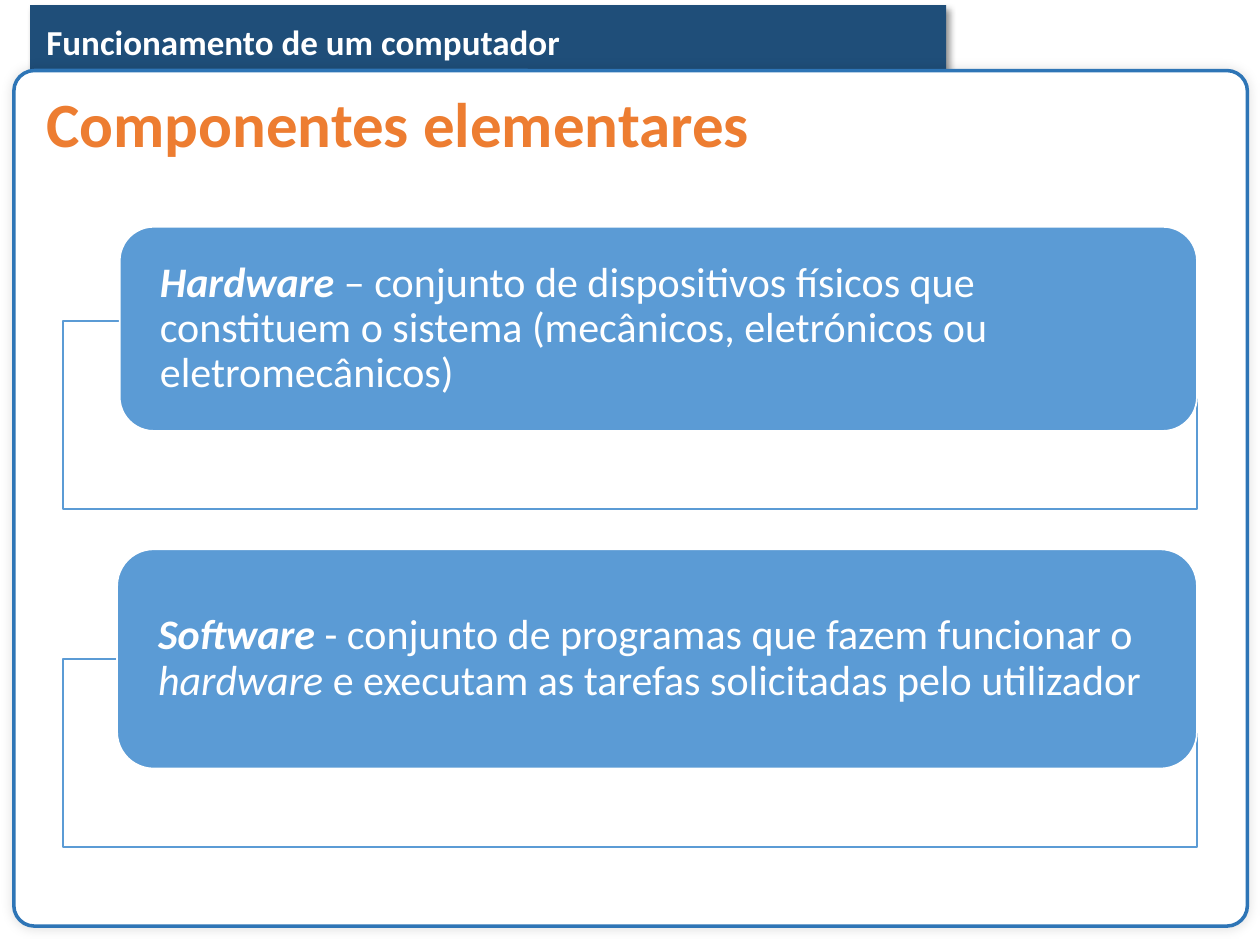
from lxml import etree
from pptx import Presentation
from pptx import util as u
from pptx.dml.color import RGBColor
from pptx.enum import shapes, text
from pptx.oxml import ns

NAVY = RGBColor(0x1F, 0x4E, 0x79)
BORDER_BLUE = RGBColor(0x2E, 0x75, 0xB6)
BLUE = RGBColor(0x5B, 0x9B, 0xD5)
ORANGE = RGBColor(0xED, 0x7D, 0x31)
WHITE = RGBColor(0xFF, 0xFF, 0xFF)
RECTANGLE = shapes.MSO_SHAPE.RECTANGLE
ROUNDED = shapes.MSO_SHAPE.ROUNDED_RECTANGLE

DEFINITIONS = [
    ((0.5, 2.55, 9, 1.49), (0.95, 1.8, 8.55, 1.62), [
        ("Hardware", True, True),
        (" – conjunto de dispositivos físicos que constituem o sistema "
         "(mecânicos, eletrónicos ou eletromecânicos)", False, False),
    ]),
    ((0.5, 5.23, 9, 1.49), (0.93, 4.36, 8.57, 1.74), [
        ("Software", True, True),
        (" - conjunto de programas que fazem funcionar o ", False, False),
        ("hardware", False, True),
        (" e executam as tarefas solicitadas pelo utilizador", False, False),
    ]),
]


def inches(box):
    """Convert a left, top, width, height box to lengths."""
    return [u.Inches(value) for value in box]


def add_box(slide, kind, box, fill, line=None, width=1):
    """Add a filled preset shape without a shadow."""
    shape = slide.shapes.add_shape(kind, *inches(box))
    shape.shadow.inherit = False
    shape.fill.solid()
    shape.fill.fore_color.rgb = fill
    if line is None:
        shape.line.fill.background()
    else:
        shape.line.color.rgb = line
        shape.line.width = u.Pt(width)
    return shape


def add_shadow(shape, opacity, blur, distance, angle):
    """Give a shape a soft black outer shadow."""
    effects = shape.element.spPr.find(ns.qn("a:effectLst"))
    shadow = etree.SubElement(
        effects, ns.qn("a:outerShdw"), blurRad=str(u.Pt(blur)),
        dist=str(u.Pt(distance)), dir=str(angle * 60000),
        algn="ctr", rotWithShape="0")
    color = etree.SubElement(shadow, ns.qn("a:srgbClr"), val="000000")
    etree.SubElement(color, ns.qn("a:alpha"), val=str(opacity * 1000))


def style_font(font, size, color, bold, italic=False):
    """Set the typeface, size, colour and emphasis of a font."""
    font.name = "Calibri"
    font.size = u.Pt(size)
    font.color.rgb = color
    font.bold = bold
    font.italic = italic


def add_heading(slide, box, words, size, color, spacing):
    """Add a bold one-line heading."""
    frame = slide.shapes.add_textbox(*inches(box)).text_frame
    frame.word_wrap = True
    paragraph = frame.paragraphs[0]
    paragraph.text = words
    paragraph.line_spacing = spacing
    style_font(paragraph.runs[0].font, size, color, True)


def add_frame(slide, tab_box, panel_box):
    """Add the chapter tab and the panel that holds the content."""
    tab = add_box(slide, RECTANGLE, tab_box, NAVY)
    add_shadow(tab, 40, 4, 3, 45)
    add_heading(slide, (0.27, 0.06, 7.5, 0.47),
                "Funcionamento de um computador", 20, WHITE, u.Pt(28.1))
    panel = add_box(slide, ROUNDED, panel_box, WHITE, BORDER_BLUE, 2)
    panel.adjustments[0] = 0.024
    add_shadow(panel, 13, 6, 0, 0)


def add_definition(slide, outline_box, label_box, pieces):
    """Add an outlined box with a rounded definition label over it."""
    outline = add_box(slide, RECTANGLE, outline_box, WHITE, BLUE)
    color = outline.fill._xPr.find(".//" + ns.qn("a:srgbClr"))
    etree.SubElement(color, ns.qn("a:alpha"), val="90000")
    label = add_box(slide, ROUNDED, label_box, BLUE, WHITE)
    frame = label.text_frame
    frame.word_wrap = True
    frame.vertical_anchor = text.MSO_ANCHOR.MIDDLE
    frame.margin_left = frame.margin_right = u.Inches(0.24)
    frame.margin_top = frame.margin_bottom = 0
    paragraph = frame.paragraphs[0]
    paragraph.alignment = text.PP_ALIGN.LEFT
    paragraph.line_spacing = 0.9
    for words, bold, italic in pieces:
        run = paragraph.add_run()
        run.text = words
        style_font(run.font, 24, WHITE, bold, italic)


def main():
    """Build and save the presentation."""
    presentation = Presentation()
    presentation.slide_width = u.Inches(10)
    presentation.slide_height = u.Inches(7.5)
    slide = presentation.slides.add_slide(presentation.slide_layouts[6])
    add_frame(slide, (0.24, 0.04, 7.27, 0.62), (0.11, 0.56, 9.79, 6.79))
    for outline_box, label_box, pieces in DEFINITIONS:
        add_definition(slide, outline_box, label_box, pieces)
    add_heading(slide, (0.27, 0.69, 9.2, 0.66),
                "Componentes elementares", 36, ORANGE, 0.9)
    presentation.save("out.pptx")


if __name__ == "__main__":
    main()
